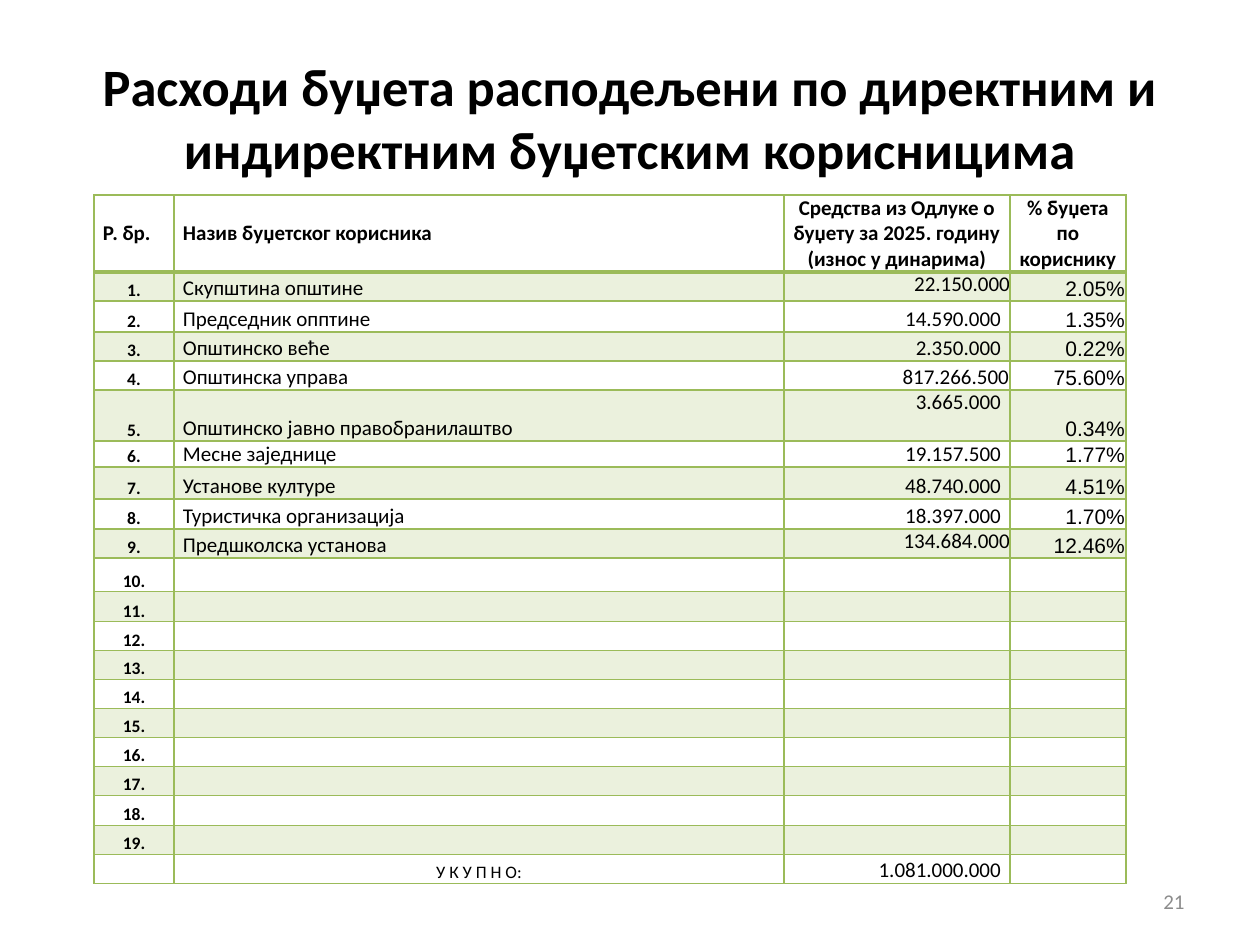
"""Build the slide with budget expenditure by direct and indirect budget users."""
from dataclasses import dataclass
from itertools import product

from lxml.etree import SubElement
from pptx import Presentation
from pptx.dml.color import RGBColor
from pptx.enum.lang import MSO_LANGUAGE_ID
from pptx.enum.text import MSO_ANCHOR, PP_ALIGN
from pptx.oxml.ns import qn
from pptx.util import Pt

TITLE = "Расходи буџета расподељени по директним и индиректним буџетским корисницима"
HEADER = (
    "Р. бр.",
    "Назив буџетског корисника",
    "Средства из Одлуке о буџету за 2025. годину (износ у динарима)",
    "% буџета по кориснику",
)
USERS = [
    ("Скупштина општине", "22.150.000", "2.05%"),
    ("Председник опптине", "14.590.000", "1.35%"),
    ("Општинско веће", "2.350.000", "0.22%"),
    ("Општинска управа", "817.266.500", "75.60%"),
    ("Општинско јавно правобранилаштво", "3.665.000", "0.34%"),
    ("Месне заједнице", "19.157.500", "1.77%"),
    ("Установе културе", "48.740.000", "4.51%"),
    ("Туристичка организација", "18.397.000", "1.70%"),
    ("Предшколска установа", "134.684.000", "12.46%"),
]
NUMBERED_ROWS = 19
TOTAL = ("", "У К У П Н О:", "1.081.000.000", "")
PAGE = "21"

EMU_PER_PX = 7257
TITLE_BOX = (63, 38, 1134, 158)
PAGE_BOX = (903, 876, 294, 50)
TABLE_ORIGIN = (94, 195)
COLUMN_WIDTHS = (80, 610, 226, 116)
ROW_HEIGHT = 29
SPECIAL_HEIGHTS = {0: 77, 2: 31, 5: 51, 6: 26, 7: 32, 8: 30, 10: 34, 11: 30, 18: 30}
TOP_AMOUNTS = (1, 5, 9)
FLUSH_AMOUNTS = {1: 0, 4: 1, 9: 0}
WIDE_INSET, NARROW_INSET = 9, 1


@dataclass(frozen=True)
class Theme:
    font: str = "Calibri"
    percent_font: str = "Arial"
    ink: str = "000000"
    muted: str = "8C8C8C"
    grid: str = "9BBB59"
    band: str = "EBF1DD"
    title: int = 30
    body: int = 12
    small: int = 10
    line: int = 1
    header_line: int = 2


THEME = Theme()


def px(length):
    return length * EMU_PER_PX


def write(frame, text, size=THEME.body, bold=False, font=THEME.font,
          color=THEME.ink, align=PP_ALIGN.LEFT):
    paragraph = frame.paragraphs[0]
    paragraph.alignment = align
    if not text:
        SubElement(paragraph._p, qn("a:endParaRPr"), sz=str(size * 100))
        return
    run = paragraph.add_run()
    run.text = text
    run.font.size, run.font.bold, run.font.name = Pt(size), bold, font
    run.font.color.rgb = RGBColor.from_string(color)
    run.font.language_id = MSO_LANGUAGE_ID.SERBIAN_CYRILLIC


def draw_borders(cell, row):
    properties = cell._tc.get_or_add_tcPr()
    heavy_side = {0: "lnB", 1: "lnT"}.get(row)
    for position, side in enumerate(("lnL", "lnR", "lnT", "lnB")):
        width = THEME.header_line if side == heavy_side else THEME.line
        border = properties.makeelement(qn(f"a:{side}"), {"w": str(Pt(width))})
        fill = SubElement(border, qn("a:solidFill"))
        SubElement(fill, qn("a:srgbClr"), val=THEME.grid)
        properties.insert(position, border)


def cell_format(row, column, last_row):
    if row == 0:
        align = PP_ALIGN.LEFT if column < 2 else PP_ALIGN.CENTER
        return {"bold": True, "align": align}
    if column == 0:
        return {"size": THEME.small, "bold": True, "align": PP_ALIGN.CENTER}
    if column == 1:
        if row == last_row:
            return {"size": THEME.small, "align": PP_ALIGN.CENTER}
        return {}
    font = THEME.percent_font if column == 3 else THEME.font
    return {"font": font, "align": PP_ALIGN.RIGHT}


def place_text(cell, row, column):
    inset = WIDE_INSET
    cell.vertical_anchor = MSO_ANCHOR.MIDDLE if row == 0 else MSO_ANCHOR.BOTTOM
    if row and column == 3:
        inset = NARROW_INSET
    if column == 2:
        inset = FLUSH_AMOUNTS.get(row, inset)
        if row in TOP_AMOUNTS:
            cell.vertical_anchor = MSO_ANCHOR.TOP
    cell.margin_left = cell.margin_right = px(inset)
    cell.margin_top = cell.margin_bottom = 0


def add_budget_table(slide):
    blank_users = [("", "", "")] * (NUMBERED_ROWS - len(USERS))
    numbered = [(f"{number}.", *user)
                for number, user in enumerate(USERS + blank_users, start=1)]
    records = [HEADER, *numbered, TOTAL]
    heights = [SPECIAL_HEIGHTS.get(row, ROW_HEIGHT) for row in range(len(records))]
    extent = (*TABLE_ORIGIN, sum(COLUMN_WIDTHS), sum(heights))
    table = slide.shapes.add_table(
        len(records), len(HEADER), *map(px, extent)).table
    table.first_row = table.horz_banding = False
    for column, width in zip(table.columns, COLUMN_WIDTHS):
        column.width = px(width)
    for table_row, height in zip(table.rows, heights):
        table_row.height = px(height)

    last_row = len(records) - 1
    for row, column in product(range(len(records)), range(len(HEADER))):
        cell = table.cell(row, column)
        if row % 2 and row != last_row:
            cell.fill.solid()
            cell.fill.fore_color.rgb = RGBColor.from_string(THEME.band)
        else:
            cell.fill.background()
        place_text(cell, row, column)
        draw_borders(cell, row)
        write(cell.text_frame, records[row][column],
              **cell_format(row, column, last_row))


def main():
    presentation = Presentation()
    presentation.slide_width, presentation.slide_height = px(1260), px(945)
    slide = presentation.slides.add_slide(presentation.slide_layouts[5])

    title = slide.shapes.title
    title.left, title.top, title.width, title.height = map(px, TITLE_BOX)
    title.text_frame.vertical_anchor = MSO_ANCHOR.MIDDLE
    write(title.text_frame, TITLE, size=THEME.title, bold=True,
          align=PP_ALIGN.CENTER)

    add_budget_table(slide)

    page = slide.shapes.add_textbox(*map(px, PAGE_BOX)).text_frame
    page.word_wrap = True
    page.vertical_anchor = MSO_ANCHOR.MIDDLE
    write(page, PAGE, color=THEME.muted, align=PP_ALIGN.RIGHT)

    presentation.save("out.pptx")


if __name__ == "__main__":
    main()
